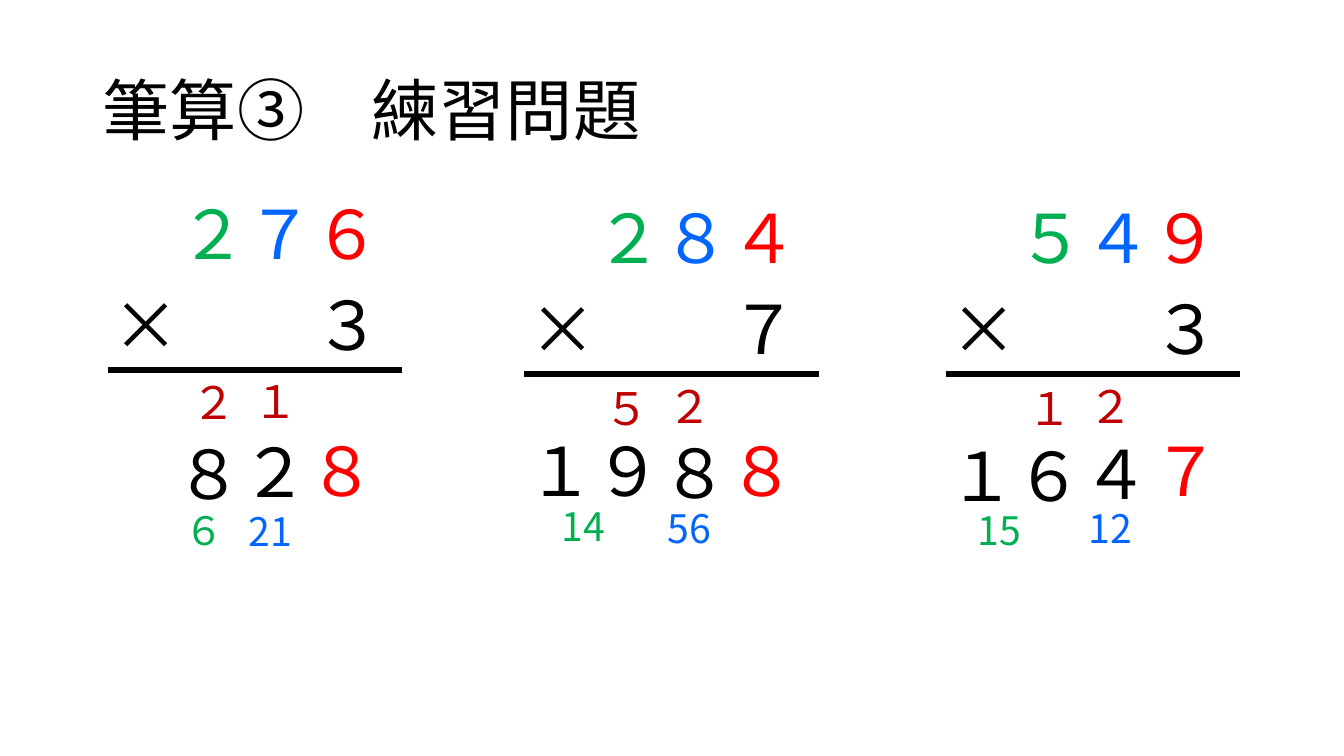
from pptx import Presentation
from pptx.dml.color import RGBColor
from pptx.enum.shapes import MSO_CONNECTOR
from pptx.enum.text import MSO_ANCHOR
from pptx.oxml.ns import qn
from pptx.util import Inches, Pt
from lxml import etree

FONT = "Noto Sans CJK JP"
BLACK, RED, DARK = "000000", "FF0000", "C00000"
GREEN, BLUE = "00B050", "0066FF"
TITLE = "筆算③\u3000練習問題"

# Each sum hangs on its rule; parts are (text, right, down) in inches from it
SUMS = [
    {"rule": (1.07, 3.67), "top": "２７６", "by": "３",
     "carry": [("２", 0.73, 0), ("１", 1.35, -0.01)],
     "answer": [("８", 0.57, 0.57), ("２", 1.23, 0.55), ("８", 1.89, 0.54)],
     "parts": [("６", 0.66, 1.3), ("21", 1.3, 1.31)]},
    {"rule": (5.2, 3.71), "top": "２８４", "by": "７",
     "carry": [("５", 0.7, 0.02), ("２", 1.32, 0)],
     "answer": [("１９", -0.07, 0.5), ("８", 1.26, 0.52), ("８", 1.93, 0.5)],
     "parts": [("14", 0.27, 1.22), ("56", 1.32, 1.24)]},
    {"rule": (9.38, 3.71), "top": "５４９", "by": "３",
     "carry": [("１", 0.71, 0.02), ("２", 1.32, 0)],
     "answer": [("１６", -0.07, 0.55), ("４", 1.26, 0.53), ("７", 1.95, 0.5)],
     "parts": [("15", 0.22, 1.26), ("12", 1.32, 1.24)]},
]
HIGH = {48: 0.91, 32: 0.64, 28: 0.57}  # box height by text size
SPAN = 2.92  # length of a rule

deck = Presentation()
deck.slide_width, deck.slide_height = Inches(13.33), Inches(7.5)
slide = deck.slides.add_slide(deck.slide_layouts[6])


def paint(color):
    return RGBColor.from_string(color)


def write(x, y, wide, pieces, size=48, high=None):
    """Add a text box of (text, colour) pieces."""
    box = slide.shapes.add_textbox(
        Inches(x), Inches(y), Inches(wide), Inches(high or HIGH[size]))
    frame = box.text_frame
    frame.word_wrap = True
    line = frame.paragraphs[0]
    for text, color in pieces:
        run = line.add_run()
        run.text = text
        run.font.size, run.font.name = Pt(size), FONT
        run.font.color.rgb = paint(color)
        east = etree.SubElement(run.font._element, qn("a:ea"))
        east.set("typeface", FONT)
    return frame


def rule(x, y):
    bar = slide.shapes.add_connector(
        MSO_CONNECTOR.STRAIGHT, Inches(x), Inches(y), Inches(x + SPAN), Inches(y))
    bar.line.color.rgb, bar.line.width = paint(BLACK), Pt(4.5)
    etree.SubElement(bar._element.spPr, qn("a:effectLst"))


# Title
head = write(0.92, 0.4, 11.5, [(TITLE, BLACK)], high=1.45)
head.vertical_anchor = MSO_ANCHOR.MIDDLE
head.paragraphs[0].line_spacing = 0.9

for sum_ in SUMS:
    x, y = sum_["rule"]
    # Factors and rule
    write(x + 0.61, y - 1.81, 2.21, zip(sum_["top"], (GREEN, BLUE, RED)))
    write(x - 0.05, y - 0.91, 2.97, [("×\u3000\u3000" + sum_["by"], BLACK)])
    rule(x, y)
    # Carried digits
    for text, dx, dy in sum_["carry"]:
        write(x + dx, y + dy, 0.64, [(text, DARK)], 32)
    # Answer, with the ones digit in red
    for text, dx, dy in sum_["answer"]:
        color = RED if dx > 1.5 else BLACK
        write(x + dx, y + dy, 0.8 * len(text), [(text, color)])
    # Partial products
    for (text, dx, dy), color in zip(sum_["parts"], (GREEN, BLUE)):
        write(x + dx, y + dy, 0.8, [(text, color)], 28)

deck.save("out.pptx")
